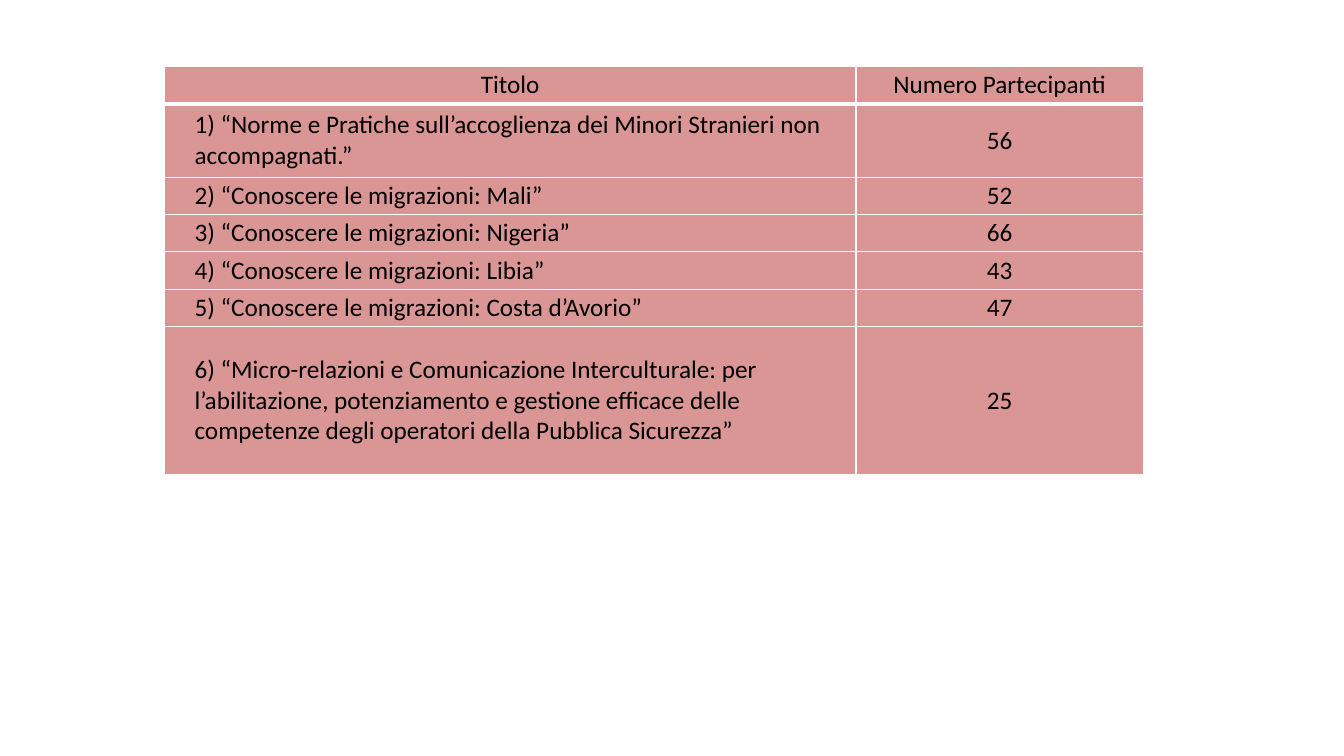
from dataclasses import dataclass

import pptx
import pptx.dml.color
import pptx.enum.text
import pptx.oxml
import pptx.oxml.ns
import pptx.table
import pptx.util

COLORS = {"rose": "D99694", "border": "FFFFFF", "text": "000000"}
COLUMN_WIDTHS = (6.86, 2.85)
SIDE_INDENT = 0.23


@dataclass(frozen=True)
class Course:
    title: str
    participants: str
    height: float = 0.37


HEADER = Course("Titolo", "Numero Partecipanti")
COURSES = (
    Course("1) “Norme e Pratiche sull’accoglienza dei Minori Stranieri non accompagnati.”", "56", 0.73),
    Course("2) “Conoscere le migrazioni: Mali”", "52"),
    Course("3) “Conoscere le migrazioni: Nigeria”", "66"),
    Course("4) “Conoscere le migrazioni: Libia”", "43"),
    Course("5) “Conoscere le migrazioni: Costa d’Avorio”", "47"),
    Course(
        "6) “Micro-relazioni e Comunicazione Interculturale: per l’abilitazione, "
        "potenziamento e gestione efficace delle competenze degli operatori "
        "della Pubblica Sicurezza”",
        "25",
        1.47,
    ),
)


def write_text(cell: pptx.table._Cell, text: str, *, centered: bool, size: float = 18,
               color: str = "text", font: str = "Calibri") -> None:
    cell.text = text
    paragraph = cell.text_frame.paragraphs[0]
    align = pptx.enum.text.PP_ALIGN
    paragraph.alignment = align.CENTER if centered else align.LEFT
    properties = paragraph._p.get_or_add_pPr()
    for side in ("marL", "marR"):
        properties.set(side, str(pptx.util.Inches(SIDE_INDENT)))
    run_font = paragraph.runs[0].font
    run_font.name = font
    run_font.size = pptx.util.Pt(size)
    run_font.color.rgb = pptx.dml.color.RGBColor.from_string(COLORS[color])


def draw_borders(cell: pptx.table._Cell, *, top: float, bottom: float) -> None:
    properties = cell._tc.get_or_add_tcPr()
    widths = {"lnL": 1, "lnR": 1, "lnT": top, "lnB": bottom}
    for position, (edge, width) in enumerate(widths.items()):
        properties.insert(position, pptx.oxml.parse_xml(
            f'<a:{edge} {pptx.oxml.ns.nsdecls("a")} w="{pptx.util.Pt(width)}">'
            f'<a:solidFill><a:srgbClr val="{COLORS["border"]}"/></a:solidFill>'
            f'</a:{edge}>'
        ))


def format_cell(cell: pptx.table._Cell, row: int) -> None:
    cell.vertical_anchor = pptx.enum.text.MSO_ANCHOR.MIDDLE
    cell.margin_left = cell.margin_right = pptx.util.Inches(0.07)
    cell.margin_top = cell.margin_bottom = 0
    cell.fill.solid()
    cell.fill.fore_color.rgb = pptx.dml.color.RGBColor.from_string(COLORS["rose"])
    draw_borders(cell, top=3 if row == 1 else 1, bottom=3 if row == 0 else 1)


def main() -> None:
    presentation = pptx.Presentation()
    presentation.slide_width = pptx.util.Inches(13.33)
    presentation.slide_height = pptx.util.Inches(7.5)
    slide = presentation.slides.add_slide(presentation.slide_layouts[6])

    entries = (HEADER, *COURSES)
    course_table = slide.shapes.add_table(
        len(entries), len(COLUMN_WIDTHS),
        pptx.util.Inches(1.63), pptx.util.Inches(0.66),
        pptx.util.Inches(sum(COLUMN_WIDTHS)),
        pptx.util.Inches(sum(entry.height for entry in entries)),
    ).table
    course_table.horz_banding = False
    for column, width in zip(course_table.columns, COLUMN_WIDTHS):
        column.width = pptx.util.Inches(width)
    course_table.first_row = False

    for row, entry in enumerate(entries):
        course_table.rows[row].height = pptx.util.Inches(entry.height)
        for column, text in enumerate((entry.title, entry.participants)):
            cell = course_table.cell(row, column)
            write_text(cell, text, centered=row == 0 or column == 1)
            format_cell(cell, row)

    presentation.save("out.pptx")


if __name__ == "__main__":
    main()
